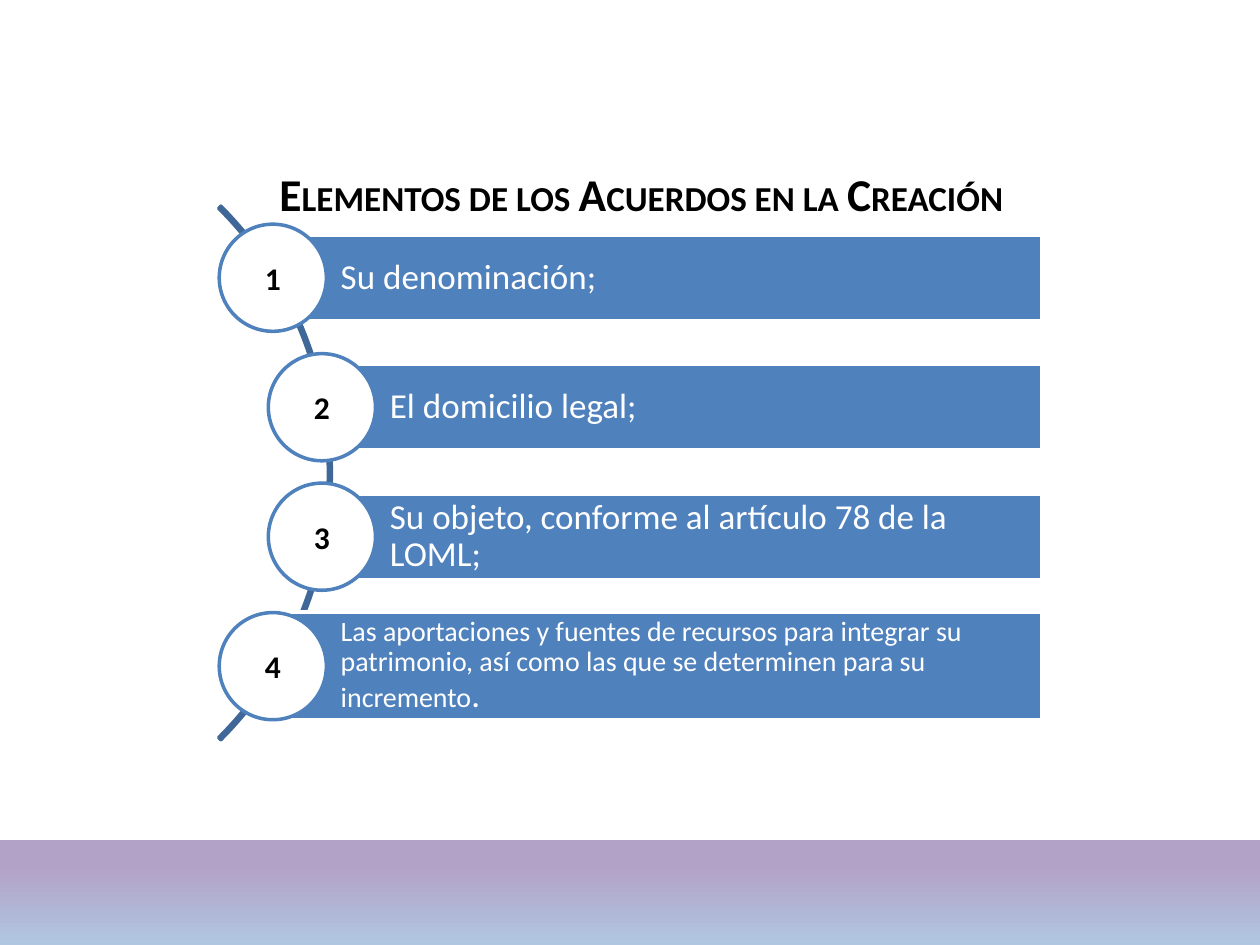
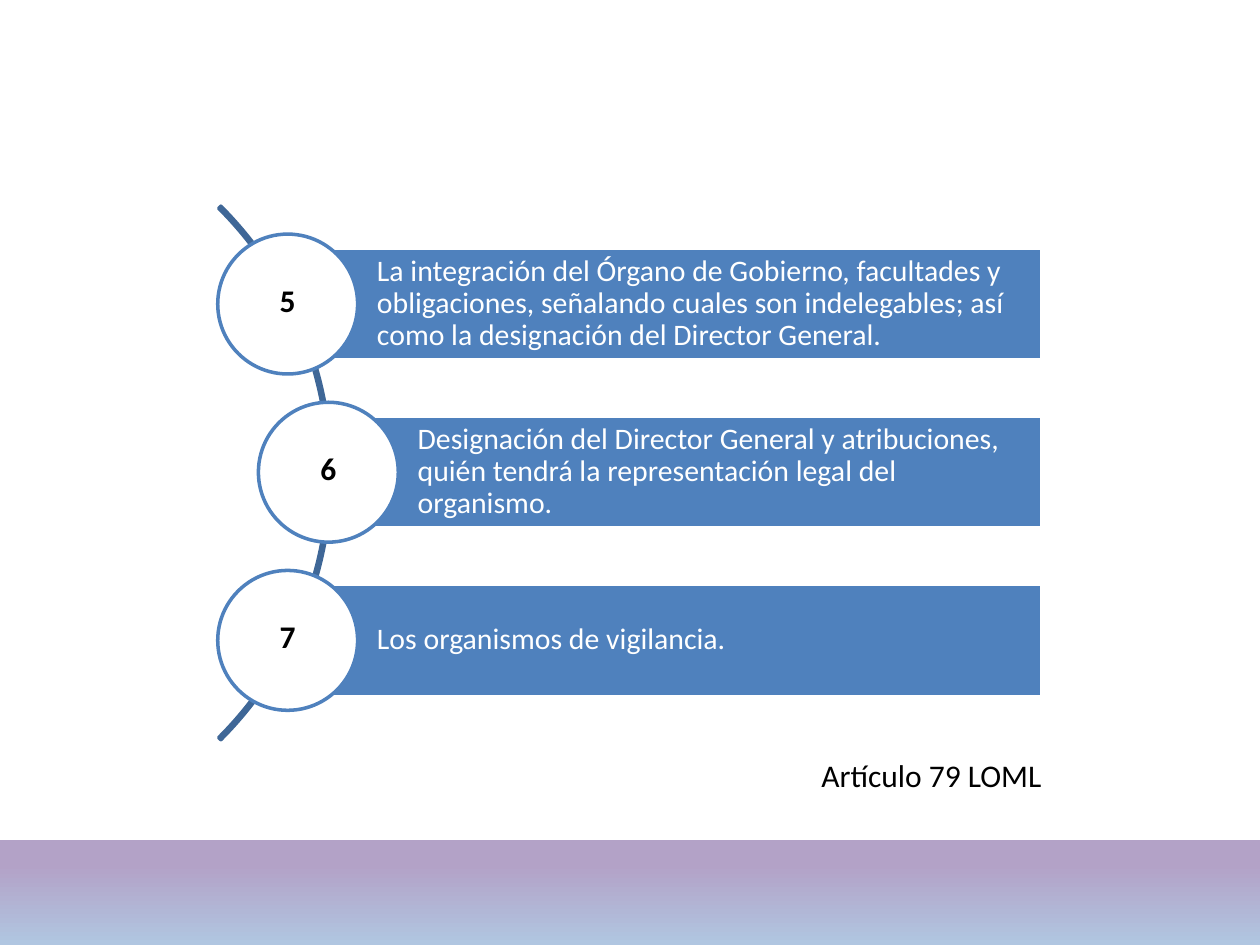
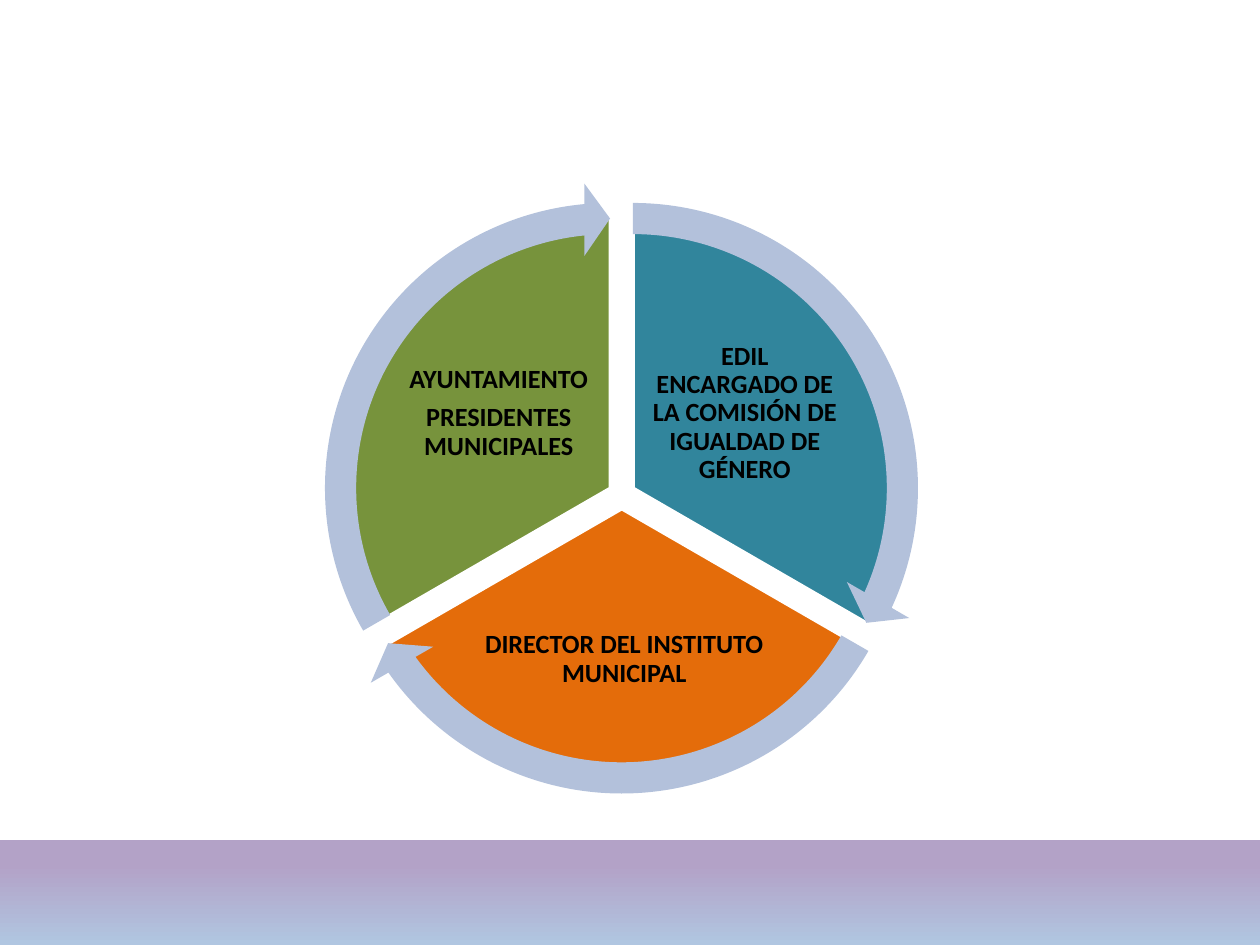
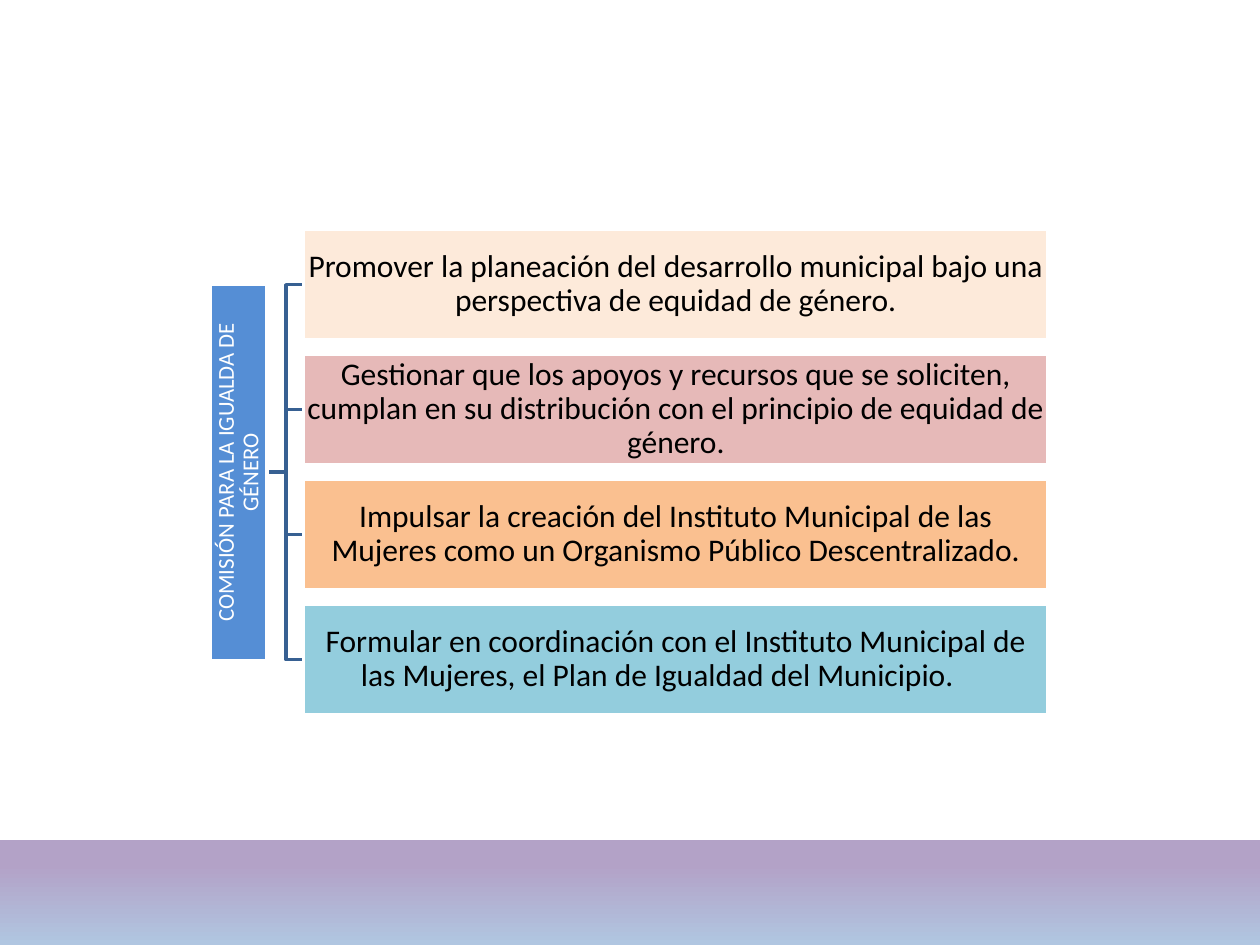
from dataclasses import dataclass
from typing import Optional

from pptx import Presentation
from pptx.dml.color import RGBColor
from pptx.enum.shapes import MSO_SHAPE as Preset
from pptx.enum.text import MSO_ANCHOR as Anchor, PP_ALIGN as Align
from pptx.shapes.autoshape import Shape
from pptx.slide import Slide
from pptx.util import Cm, Pt


# Theme: colours, font and type sizes
@dataclass(frozen=True)
class Theme:
    font: str = "Calibri"
    black: str = "000000"
    white: str = "FFFFFF"
    blue: str = "4F81BD"
    arc: str = "3F6797"
    band_top: str = "B3A2C7"
    band_bottom: str = "B0C6E1"
    teal: str = "31859C"
    orange: str = "E46C0A"
    green: str = "77933C"
    arrow: str = "B3C1DB"
    bracket: str = "376092"
    root: str = "558ED5"
    cream: str = "FDEADA"
    rose: str = "E6B9B8"
    peach: str = "FAC090"
    sky: str = "93CDDD"
    title_capital: float = 26
    title_small: float = 20
    item: float = 20
    item_small: float = 16
    item_medium: float = 17
    body: float = 18
    sector: float = 15
    root_size: float = 13
    line: float = 2


THEME = Theme()


# Descriptions of repeated elements; lengths are centimetres
@dataclass(frozen=True)
class Area:
    left: float
    top: float
    width: float
    height: float


@dataclass(frozen=True)
class Span:
    text: str
    size: float


@dataclass(frozen=True)
class Style:
    color: str = THEME.black
    bold: bool = False
    align: Align = Align.LEFT
    anchor: Anchor = Anchor.TOP
    spacing: float = 1.0
    insets: tuple[float, float, float, float] = (0.25, 0.13, 0.25, 0.13)


@dataclass(frozen=True)
class Item:
    number: str
    center: float
    spans: list[Span]
    bar_height: float
    margin: float


@dataclass(frozen=True)
class ItemList:
    items: list[Item]
    first_center: float
    pitch: float
    diameter: float
    indent: float
    number_rise: float


@dataclass(frozen=True)
class Sector:
    left: float
    top: float
    start: float
    end: float
    color: str
    label: Area
    lines: list[str]


@dataclass(frozen=True)
class Task:
    text: str
    color: str


Paras = list[list[Span]]


# Drawing functions
def style_shape(shape: Shape, fill: Optional[str], line: Optional[str]) -> None:
    shape.shadow.inherit = False
    if fill:
        shape.fill.solid()
        shape.fill.fore_color.rgb = RGBColor.from_string(fill)
    else:
        shape.fill.background()
    if line:
        shape.line.color.rgb = RGBColor.from_string(line)
        shape.line.width = Pt(THEME.line)
    else:
        shape.line.fill.background()


def add_preset(page: Slide, preset: Preset, area: Area, fill: Optional[str] = None,
               line: Optional[str] = None, adjustments: tuple[float, ...] = ()) -> Shape:
    shape = page.shapes.add_shape(preset, Cm(area.left), Cm(area.top),
                                  Cm(area.width), Cm(area.height))
    for index, value in enumerate(adjustments):
        shape.adjustments[index] = value
    style_shape(shape, fill, line)
    return shape


def write(box: Shape, paras: Paras, style: Style) -> None:
    frame = box.text_frame
    frame.word_wrap = True
    frame.vertical_anchor = style.anchor
    (frame.margin_left, frame.margin_top,
     frame.margin_right, frame.margin_bottom) = map(Cm, style.insets)
    for index, spans in enumerate(paras):
        para = frame.add_paragraph() if index else frame.paragraphs[0]
        para.alignment = style.align
        para.line_spacing = style.spacing
        if index < len(paras) - 1:
            para.space_after = Pt(5.5)
        for span in spans:
            run = para.add_run()
            run.text = span.text
            run.font.name = THEME.font
            run.font.size = Pt(span.size)
            run.font.bold = style.bold
            run.font.color.rgb = RGBColor.from_string(style.color)


def add_text(page: Slide, area: Area, paras: Paras, style: Style) -> None:
    box = page.shapes.add_textbox(Cm(area.left), Cm(area.top),
                                  Cm(area.width), Cm(area.height))
    write(box, paras, style)


def add_page(deck: Presentation) -> Slide:
    page = deck.slides.add_slide(deck.slide_layouts[6])
    band = add_preset(page, Preset.RECTANGLE, Area(0, 16.93, 25.4, 2.12), THEME.band_top)
    band.fill.gradient()
    band.fill.gradient_angle = 270
    stops = zip(band.fill.gradient_stops, (0.24, 1), (THEME.band_top, THEME.band_bottom))
    for stop, position, color in stops:
        stop.position = position
        stop.color.rgb = RGBColor.from_string(color)
    return page


def add_item_list(page: Slide, listing: ItemList) -> None:
    """Arc with numbered circles, each at the start of a text bar."""
    add_preset(page, Preset.BLOCK_ARC, Area(-8.53, 1.93, 15.21, 15.21),
               line=THEME.arc, adjustments=(189, 27, 0.004))
    right, size = 21.01, listing.diameter
    for row, item in enumerate(listing.items):
        middle = listing.first_center + row * listing.pitch
        bar = add_preset(page, Preset.RECTANGLE,
                         Area(item.center, middle - item.bar_height / 2,
                              right - item.center, item.bar_height),
                         THEME.blue, THEME.white)
        margin = item.margin
        write(bar, [item.spans],
              Style(THEME.white, anchor=Anchor.MIDDLE, spacing=0.9,
                    insets=(listing.indent, margin, margin, margin)))
        add_preset(page, Preset.OVAL,
                   Area(item.center - size / 2, middle - size / 2, size, size),
                   THEME.white, THEME.blue)
        add_text(page, Area(item.center - 0.5, middle - listing.number_rise, 1, 1.02),
                 [[Span(item.number, THEME.body)]], Style(bold=True, align=Align.CENTER))


def add_cycle(page: Slide, sectors: list[Sector]) -> None:
    """Three pie sectors, then the arrows that run around them."""
    pie, arrow, overhang, head = 10.95, 12.32, 0.69, 3.275
    style = Style(bold=True, align=Align.CENTER, anchor=Anchor.MIDDLE,
                  spacing=0.9, insets=(0.05,) * 4)
    for sector in sectors:
        add_preset(page, Preset.PIE, Area(sector.left, sector.top, pie, pie),
                   sector.color, THEME.white, (sector.start, sector.end))
        add_text(page, sector.label,
                 [[Span(line, THEME.sector)] for line in sector.lines], style)
    for sector in sectors:
        add_preset(page, Preset.CIRCULAR_ARROW,
                   Area(sector.left - overhang, sector.top - overhang, arrow, arrow),
                   THEME.arrow,
                   adjustments=(0.051, head, sector.end - head, sector.start, 0.059))


def add_bracket(page: Slide, start: float, end: float) -> None:
    left, bend, right = Cm(5.38), Cm(5.77), Cm(6.12)
    builder = page.shapes.build_freeform(left, Cm(start))
    builder.add_line_segments(
        [(bend, Cm(start)), (bend, Cm(end)), (right, Cm(end))], close=False)
    style_shape(builder.convert_to_shape(), None, THEME.bracket)


def add_task_tree(page: Slide, root: str, tasks: list[Task]) -> None:
    """Upright root label joined by brackets to a column of task boxes."""
    top, pitch, height = 4.62, 2.52, 2.24
    tops = [top + row * pitch for row in range(len(tasks))]
    middle = (tops[0] + tops[-1] + height) / 2
    for box_top in reversed(tops):
        add_bracket(page, middle, box_top + height / 2)

    style = Style(align=Align.CENTER, anchor=Anchor.MIDDLE, spacing=0.9, insets=(0.03,) * 4)
    label = add_preset(page, Preset.RECTANGLE, Area(1.02, middle - 0.57, 7.59, 1.14),
                       THEME.root, THEME.white)
    label.rotation = 270
    write(label, [[Span(root, THEME.root_size)]],
          Style(THEME.white, False, style.align, style.anchor, style.spacing, style.insets))
    for task, box_top in zip(tasks, tops):
        box = add_preset(page, Preset.RECTANGLE, Area(6.12, box_top, 15.01, height),
                         task.color, THEME.white)
        write(box, [[Span(task.text, THEME.body)]], style)


# Content
TITLE = [("E", "LEMENTOS DE LOS "), ("A", "CUERDOS EN LA "), ("C", "REACIÓN")]

FIRST_ITEMS = ItemList([
    Item("1", 5.5, [Span("Su denominación;", THEME.item)], 1.73, 0.15),
    Item("2", 6.49, [Span("El domicilio legal;", THEME.item)], 1.73, 0.15),
    Item("3", 6.49, [Span("Su objeto, conforme al artículo 78 de la LOML;", THEME.item)],
         1.73, 0.15),
    Item("4", 5.5, [
        Span("Las aportaciones y fuentes de recursos para integrar su patrimonio, "
             "así como las que se determinen para su incremento", THEME.item_small),
        Span(".", THEME.item)], 2.18, 0.1),
], first_center=5.6, pitch=2.61, diameter=2.16, indent=1.37, number_rise=0.51)

LAST_ITEMS = ItemList([
    Item("5", 5.8, [Span(
        "La integración del Órgano de Gobierno, facultades y obligaciones, señalando cuales "
        "son indelegables; así como la designación del Director General.",
        THEME.item_medium)], 2.26, 0.13),
    Item("6", 6.62, [Span(
        "Designación del Director General y atribuciones, quién tendrá la representación "
        "legal del organismo.", THEME.item_medium)], 2.26, 0.13),
    Item("7", 5.8, [Span("Los organismos de vigilancia.", THEME.item_medium)], 2.26, 0.13),
], first_center=6.13, pitch=3.39, diameter=2.82, indent=1.8, number_rise=0.6)

SECTORS = [
    Sector(7.29, 4.37, 162, 18, THEME.teal, Area(13.06, 6.71, 3.91, 3.25),
           ["EDIL ENCARGADO DE LA COMISIÓN DE IGUALDAD DE GÉNERO"]),
    Sector(7.06, 4.78, 18, 90, THEME.orange, Area(9.65, 11.86, 5.87, 2.87),
           ["DIRECTOR DEL INSTITUTO MUNICIPAL"]),
    Sector(6.83, 4.37, 90, 162, THEME.green, Area(8.1, 6.71, 3.91, 3.25),
           ["AYUNTAMIENTO", "PRESIDENTES MUNICIPALES"]),
]

TASKS = [
    Task("Promover la planeación del desarrollo municipal bajo una perspectiva de equidad "
         "de género.", THEME.cream),
    Task("Gestionar que los apoyos y recursos que se soliciten, cumplan en su distribución "
         "con el principio de equidad de género.", THEME.rose),
    Task("Impulsar la creación del Instituto Municipal de las Mujeres como un Organismo "
         "Público Descentralizado.", THEME.peach),
    Task("Formular en coordinación con el Instituto Municipal de las Mujeres, el Plan de "
         "Igualdad del Municipio.\t", THEME.sky),
]


def main() -> None:
    deck = Presentation()
    deck.slide_width, deck.slide_height = Cm(25.4), Cm(19.05)

    # Elements 1 to 4
    page = add_page(deck)
    title = [span for capital, rest in TITLE
             for span in (Span(capital, THEME.title_capital), Span(rest, THEME.title_small))]
    add_text(page, Area(3.94, 3.12, 17.98, 1.8), [title],
             Style(bold=True, align=Align.CENTER, insets=(0.25, 0.22, 0.25, 0.13)))
    add_item_list(page, FIRST_ITEMS)

    # Elements 5 to 7
    page = add_page(deck)
    add_item_list(page, LAST_ITEMS)
    add_text(page, Area(16.31, 15.11, 6.4, 1.02),
             [[Span("Artículo 79 LOML", THEME.body)]], Style())

    # Cycle of those responsible
    add_cycle(add_page(deck), SECTORS)

    # Tasks of the commission
    add_task_tree(add_page(deck), "COMISIÓN PARA LA IGUALDA DE GÉNERO", TASKS)

    deck.save("out.pptx")


if __name__ == "__main__":
    main()
